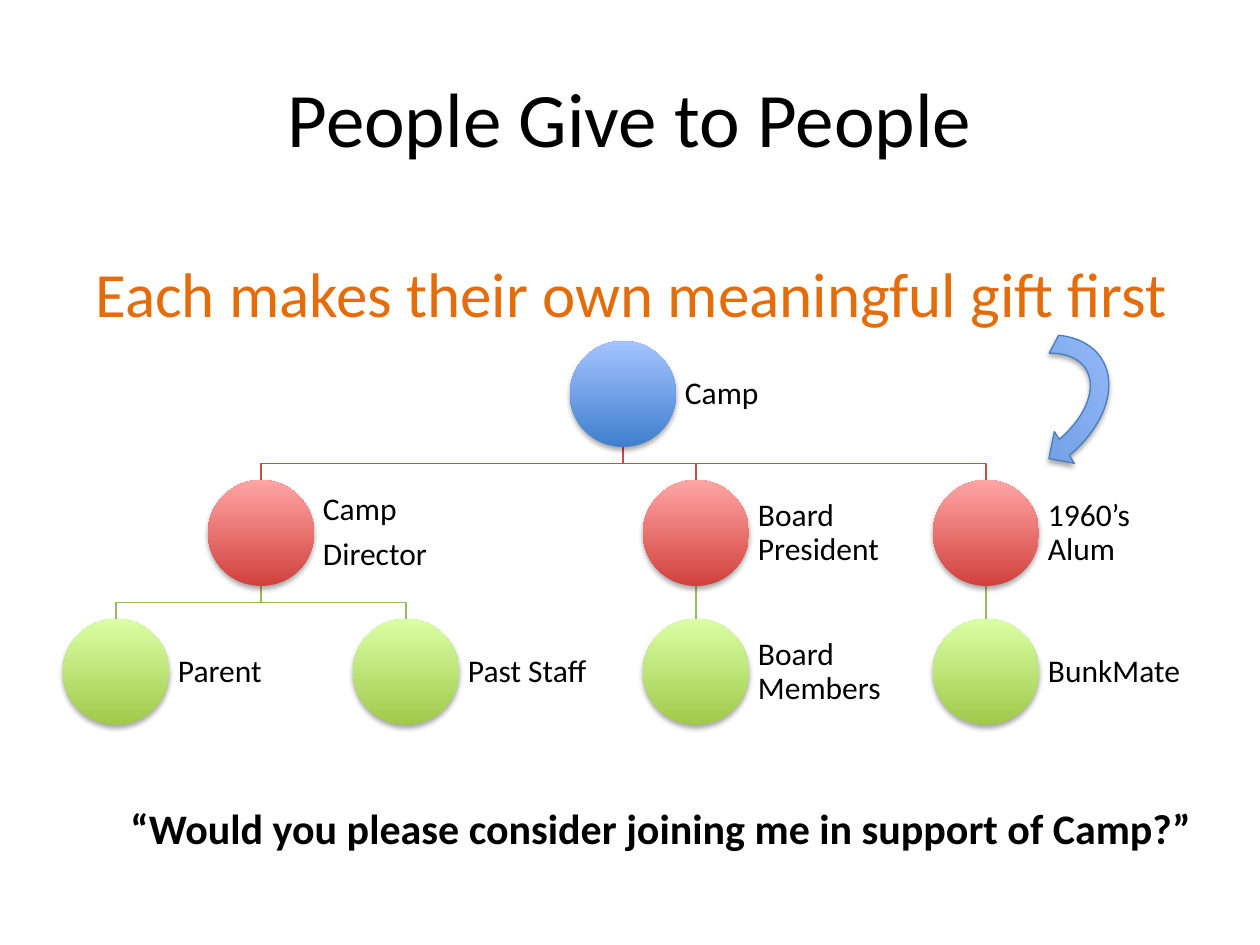
"""Build the "People Give to People" slide with its giving tree."""
from dataclasses import dataclass
from typing import Optional

import lxml.etree
import pptx
import pptx.dml.color
import pptx.enum.shapes
import pptx.enum.text
import pptx.oxml.ns
import pptx.util

EMU_PER_INCH = 914400
PX_PER_INCH = 126
DIAMETER, LABEL_WIDTH, LABEL_INSET = 106, 159, 9
LEFT, COLUMN_PITCH = 63, 290
TOP, ROW_PITCH = 341, 139

SHAPE = pptx.enum.shapes.MSO_SHAPE
ANCHOR = pptx.enum.text.MSO_ANCHOR
ALIGN = pptx.enum.text.PP_ALIGN


@dataclass(frozen=True)
class Theme:
    font: str = "Calibri"
    text: str = "000000"
    accent: str = "E46C0A"
    levels: tuple = (("3F7FCE", "A4C4FF"), ("D1403C", "FFA6A5"), ("A0CA4A", "DAFFA5"))
    links: tuple = ("C0504D", "9BBB59")
    arrow_line: str = "4B7EBC"
    title_size: int = 44
    lead_size: int = 36
    quote_size: int = 24
    label_size: int = 18
    line_width: float = 0.75


@dataclass(frozen=True)
class Node:
    label: str
    column: float
    level: int
    parent: Optional["Node"] = None

    @property
    def x(self) -> int:
        return round(LEFT + self.column * COLUMN_PITCH)

    @property
    def y(self) -> int:
        return TOP + self.level * ROW_PITCH

    @property
    def center(self) -> int:
        return self.x + DIAMETER // 2


THEME = Theme()
CAMP = Node("Camp", 1.75, 0)
DIRECTOR = Node("Camp\nDirector", 0.5, 1, CAMP)
PRESIDENT = Node("Board President", 2, 1, CAMP)
ALUM = Node("1960’s Alum", 3, 1, CAMP)
NODES = (
    CAMP,
    DIRECTOR,
    Node("Parent", 0, 2, DIRECTOR),
    Node("Past Staff", 1, 2, DIRECTOR),
    PRESIDENT,
    Node("Board Members", 2, 2, PRESIDENT),
    ALUM,
    Node("BunkMate", 3, 2, ALUM),
)


def px(n: float) -> pptx.util.Emu:
    """Turn pixels into EMU."""
    return pptx.util.Emu(round(n * EMU_PER_INCH / PX_PER_INCH))


def rgb(color: str) -> pptx.dml.color.RGBColor:
    """Turn a hex string into a colour."""
    return pptx.dml.color.RGBColor.from_string(color)


def style_text(p, size: int, color: str = THEME.text, bold: bool = False) -> None:
    """Set the font of a whole paragraph."""
    p.font.name = THEME.font
    p.font.size = pptx.util.Pt(size)
    p.font.bold = bold
    p.font.color.rgb = rgb(color)


def style_line(line, color: str) -> None:
    """Give an outline its colour and the common width."""
    line.color.rgb = rgb(color)
    line.width = pptx.util.Pt(THEME.line_width)


def fill_glossy(sp, colors: tuple) -> None:
    """Fill with a gradient rising from the first colour to the second."""
    sp.fill.gradient()
    sp.fill.gradient_angle = 90
    for stop, color in zip(sp.fill.gradient_stops, colors):
        stop.color.rgb = rgb(color)


def add_shadow(sp) -> None:
    """Add a soft shadow just below a shape."""
    qn = pptx.oxml.ns.qn
    sp.shadow.inherit = False
    effects = sp.element.spPr.find(qn("a:effectLst"))
    shadow = lxml.etree.SubElement(
        effects, qn("a:outerShdw"), blurRad=str(pptx.util.Pt(3.1)),
        dist=str(pptx.util.Pt(1.8)), dir="5400000", rotWithShape="0")
    color = lxml.etree.SubElement(shadow, qn("a:srgbClr"), val="000000")
    lxml.etree.SubElement(color, qn("a:alpha"), val="35000")


def add_link(shapes, node: Node) -> None:
    """Join a node to its parent, with a bend when they are not in line."""
    x1, y1 = node.parent.center, node.parent.y + DIAMETER
    x2, y2 = node.center, node.y
    color = THEME.links[node.parent.level]
    if x1 == x2:
        sp = shapes.add_connector(
            pptx.enum.shapes.MSO_CONNECTOR.STRAIGHT, px(x1), px(y1), px(x2), px(y2))
        lxml.etree.SubElement(sp.element.spPr, pptx.oxml.ns.qn("a:effectLst"))
    else:
        bend = (y1 + y2) / 2
        builder = shapes.build_freeform(px(x1), px(y1))
        points = ((x1, bend), (x2, bend), (x2, y2))
        builder.add_line_segments([(px(x), px(y)) for x, y in points], close=False)
        sp = builder.convert_to_shape()
        sp.fill.background()
        sp.shadow.inherit = False
    style_line(sp.line, color)


def add_node(shapes, node: Node) -> None:
    """Draw a node's circle and the label to its right."""
    sp = shapes.add_shape(SHAPE.OVAL, px(node.x), px(node.y), px(DIAMETER), px(DIAMETER))
    fill_glossy(sp, THEME.levels[node.level])
    sp.line.fill.background()
    add_shadow(sp)
    box = shapes.add_textbox(
        px(node.x + DIAMETER), px(node.y), px(LABEL_WIDTH), px(DIAMETER))
    tf = box.text_frame
    tf.word_wrap = True
    tf.vertical_anchor = ANCHOR.MIDDLE
    tf.margin_left = tf.margin_right = tf.margin_top = tf.margin_bottom = px(LABEL_INSET)
    tf.text = node.label
    for p in tf.paragraphs:
        p.line_spacing = 0.9
        p.space_after = pptx.util.Pt(6)
        style_text(p, THEME.label_size)


def add_statement(shapes, text: str, box: tuple, size: int, color: str, bold: bool) -> None:
    """Add a single line of text in a box that grows with it."""
    tf = shapes.add_textbox(*map(px, box)).text_frame
    tf.word_wrap = False
    tf.auto_size = pptx.enum.text.MSO_AUTO_SIZE.SHAPE_TO_FIT_TEXT
    tf.text = text
    style_text(tf.paragraphs[0], size, color, bold)


def add_return_arrow(shapes) -> None:
    """Draw the curved arrow above the right-hand branch."""
    sp = shapes.add_shape(SHAPE.CIRCULAR_ARROW, px(944), px(304), px(150), px(214))
    sp.rotation = 57.9
    for i, value in enumerate((1 / 8, 11.42, 204.58, 143.84, 1 / 8)):
        sp.adjustments[i] = value
    fill_glossy(sp, THEME.levels[0])
    style_line(sp.line, THEME.arrow_line)
    add_shadow(sp)


def main() -> None:
    """Build and save the slide."""
    prs = pptx.Presentation()
    prs.slide_width, prs.slide_height = px(1260), px(945)
    s = prs.slides.add_slide(prs.slide_layouts[5])
    title = s.shapes.title
    title.left, title.top, title.width, title.height = map(px, (63, 38, 1134, 158))
    tf = title.text_frame
    tf.text = "People Give to People"
    tf.vertical_anchor = ANCHOR.MIDDLE
    tf.paragraphs[0].alignment = ALIGN.CENTER
    style_text(tf.paragraphs[0], THEME.title_size)
    for node in NODES:
        if node.parent:
            add_link(s.shapes, node)
    for node in NODES:
        add_node(s.shapes, node)
    add_statement(s.shapes, "Each makes their own meaningful gift first",
                  (83, 248, 1114, 89), THEME.lead_size, THEME.accent, False)
    add_return_arrow(s.shapes)
    add_statement(s.shapes, "“Would you please consider joining me in support of Camp?”",
                  (118, 796, 1099, 63), THEME.quote_size, THEME.text, True)
    prs.save("out.pptx")


if __name__ == "__main__":
    main()
